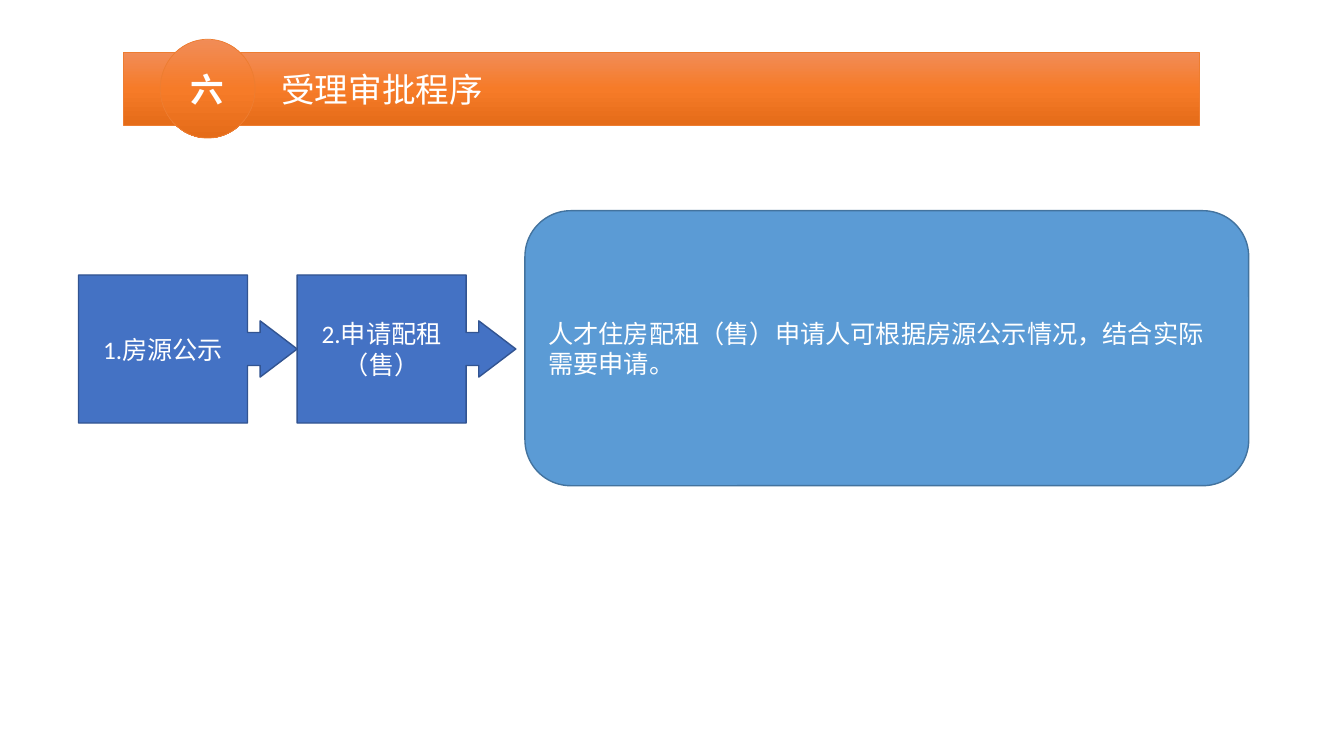
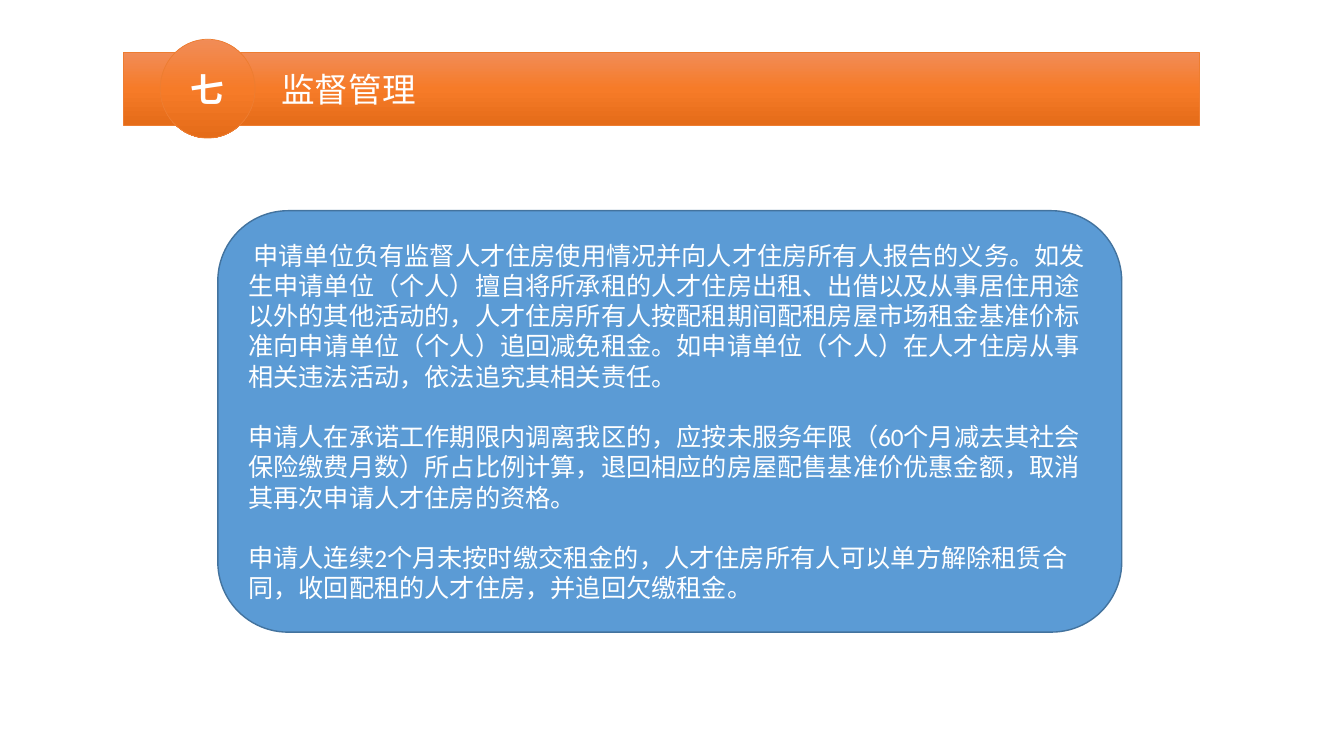
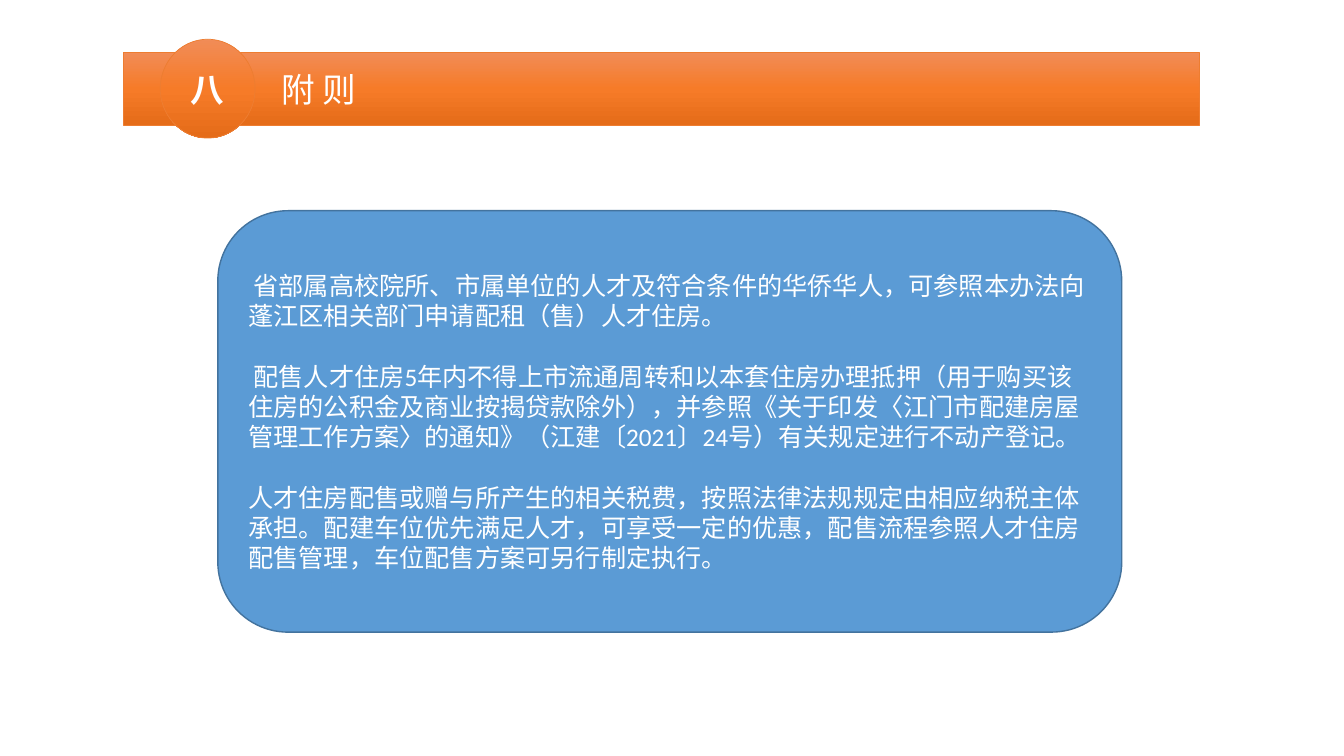
from copy import deepcopy

from pptx import Presentation
from pptx.dml.color import RGBColor
from pptx.enum.shapes import MSO_SHAPE as Shape
from pptx.enum.text import MSO_ANCHOR as Anchor, MSO_AUTO_SIZE as AutoSize, PP_ALIGN as Align
from pptx.oxml.ns import qn
from pptx.util import Cm, Pt

COLORS = {
    "text": "FFFFFF",
    "band_top": "F18C57", "band_middle": "F67B28", "band_bottom": "E56C19", "band_line": "ED7D31",
    "step": "4472C4", "step_line": "325491",
    "panel": "5B9BD5", "panel_line": "43739E",
}
BAND_STOPS = ((0, "band_top"), (0.5, "band_middle"), (1, "band_bottom"))
FONT = "Calibri"
TITLE_ONLY = 5

# Boxes are left, top, width, height in centimetres.
BAND_BOX = (3.12, 1.32, 27.1, 1.83)
FLOW_BOX = (1.98, 5.31, 29.49, 6.93)
TEXT_BOX = (5.49, 5.31, 22.78, 10.62)

STEP_SIZE = (5.51, 3.73)
STEP_ADJUSTMENTS = (0.223, 0.19, 0.25, 0.773)
STEP_GAP = 0.23
FIRST_LINE = 0.13

STEPS = ("1.房源公示", "2.申请配租（售）")
STEP_NOTE = "人才住房配租（售）申请人可根据房源公示情况，结合实际需要申请。"

# Each paragraph is its text and whether its first line is indented.
SUPERVISION = (
    ("申请单位负有监督人才住房使用情况并向人才住房所有人报告的义务。如发生申请单位（个人）擅自将所承租的人才住房出租、"
     "出借以及从事居住用途以外的其他活动的，人才住房所有人按配租期间配租房屋市场租金基准价标准向申请单位（个人）"
     "追回减免租金。如申请单位（个人）在人才住房从事相关违法活动，依法追究其相关责任。", True),
    ("申请人在承诺工作期限内调离我区的，应按未服务年限（60个月减去其社会保险缴费月数）所占比例计算，"
     "退回相应的房屋配售基准价优惠金额，取消其再次申请人才住房的资格。", False),
    ("申请人连续2个月未按时缴交租金的，人才住房所有人可以单方解除租赁合同，收回配租的人才住房，并追回欠缴租金。", False),
)
BYLAWS = (
    ("省部属高校院所、市属单位的人才及符合条件的华侨华人，可参照本办法向蓬江区相关部门申请配租（售）人才住房。", True),
    ("配售人才住房5年内不得上市流通周转和以本套住房办理抵押（用于购买该住房的公积金及商业按揭贷款除外），"
     "并参照《关于印发〈江门市配建房屋管理工作方案〉的通知》（江建〔2021〕24号）有关规定进行不动产登记。", True),
    ("人才住房配售或赠与所产生的相关税费，按照法律法规规定由相应纳税主体承担。配建车位优先满足人才，"
     "可享受一定的优惠，配售流程参照人才住房配售管理，车位配售方案可另行制定执行。", False),
)


def rgb(name):
    return RGBColor.from_string(COLORS[name])


def set_line(shape, color, width):
    shape.line.color.rgb = rgb(color)
    shape.line.width = Pt(width)


def fill_band(shape):
    """Give the shape the three-stop vertical gradient and thin outline of the heading."""
    shape.fill.gradient()
    stop_list = shape._element.spPr.find(qn("a:gradFill")).find(qn("a:gsLst"))
    stop_list.append(deepcopy(stop_list[-1]))
    for stop, (position, color) in zip(shape.fill.gradient_stops, BAND_STOPS):
        stop.position = position
        stop.color.rgb = rgb(color)
    shape.fill.gradient_angle = 270
    set_line(shape, "band_line", 0.5)


def write(shape, paragraphs, alignment=Align.LEFT, size=18, bold=False):
    """Write (text, indented) paragraphs, one line of space apart."""
    frame = shape.text_frame
    frame_format = {"word_wrap": True, "auto_size": AutoSize.NONE, "vertical_anchor": Anchor.MIDDLE}
    for name, value in frame_format.items():
        setattr(frame, name, value)
    font_format = {"name": FONT, "size": Pt(size), "bold": bold}
    for index, (text, indented) in enumerate(paragraphs):
        paragraph = frame.add_paragraph() if index else frame.paragraphs[0]
        paragraph.alignment = alignment
        if index:
            paragraph.space_before = Pt(size * 1.2)
        if indented:
            paragraph._p.get_or_add_pPr().set("indent", str(Cm(FIRST_LINE)))
        run = paragraph.add_run()
        run.text = text
        run._r.get_or_add_rPr().set("lang", "zh-CN")
        for name, value in font_format.items():
            setattr(run.font, name, value)
        run.font.color.rgb = rgb("text")


def add_shape(slide, kind, box):
    shape = slide.shapes.add_shape(kind, *map(Cm, box))
    shape.shadow.inherit = False
    return shape


def add_block(slide, kind, box, color):
    shape = add_shape(slide, kind, box)
    shape.fill.solid()
    shape.fill.fore_color.rgb = rgb(color)
    set_line(shape, color + "_line", 1)
    return shape


def add_heading(slide, box, number, text):
    left, top, width, height = box
    title = slide.shapes.title
    for name, value in zip(("left", "top", "width", "height"), box):
        setattr(title, name, Cm(value))
    fill_band(title)
    write(title, [(text, False)], size=24)
    title.text_frame.margin_left = Cm(3.97)

    badge = add_shape(slide, Shape.OVAL, (left + 0.92, top - 0.33, 2.39, 2.49))
    fill_band(badge)
    write(badge, [(number, False)], Align.CENTER, 24, True)


def add_panel(slide, box, paragraphs):
    panel = add_block(slide, Shape.ROUNDED_RECTANGLE, box, "panel")
    write(panel, paragraphs)


def add_flow(slide, box, steps, note):
    """Place the steps side by side, centred in height, and the note in the rest of the box."""
    left, top, width, height = box
    step_width, step_height = STEP_SIZE
    step_top = top + (height - step_height) / 2 + 0.02
    for index, text in enumerate(steps):
        step_box = (left + index * step_width, step_top, step_width, step_height)
        step = add_block(slide, Shape.RIGHT_ARROW_CALLOUT, step_box, "step")
        for position, value in enumerate(STEP_ADJUSTMENTS):
            step.adjustments[position] = value
        write(step, [(text, False)], Align.CENTER)
    offset = len(steps) * step_width + STEP_GAP
    add_panel(slide, (left + offset, top, width - offset, height), [(note, False)])


def add_slide(presentation, number, title):
    slide = presentation.slides.add_slide(presentation.slide_layouts[TITLE_ONLY])
    add_heading(slide, BAND_BOX, number, title)
    return slide


def main():
    presentation = Presentation()
    presentation.slide_width = Cm(33.87)
    presentation.slide_height = Cm(19.05)

    procedure = add_slide(presentation, "六", "受理审批程序")
    add_flow(procedure, FLOW_BOX, STEPS, STEP_NOTE)
    for number, title, paragraphs in (("七", "监督管理", SUPERVISION), ("八", "附 则", BYLAWS)):
        add_panel(add_slide(presentation, number, title), TEXT_BOX, paragraphs)

    presentation.save("out.pptx")


if __name__ == "__main__":
    main()
